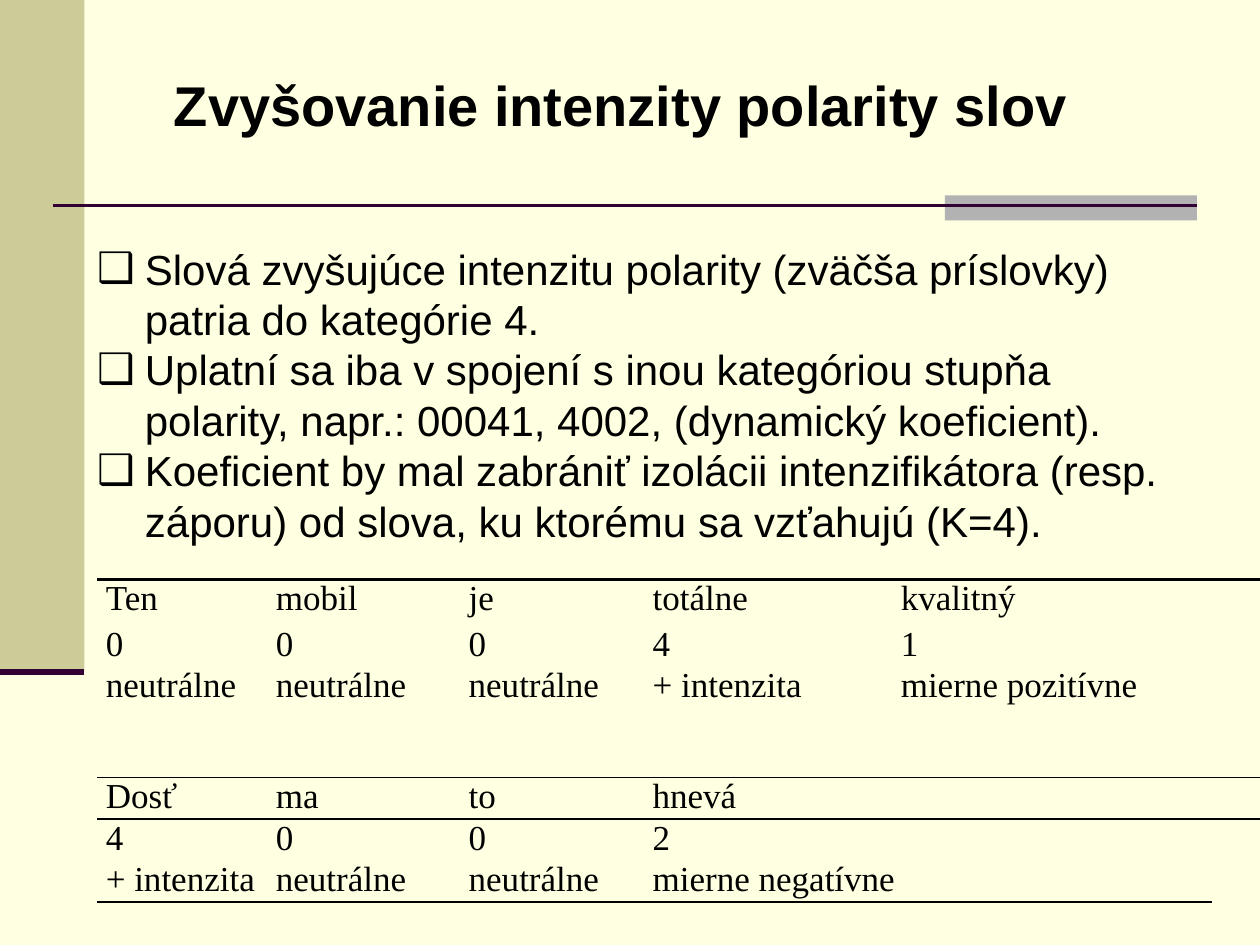
from dataclasses import dataclass

import pptx
import pptx.dml.color
import pptx.enum.shapes
import pptx.enum.text
import pptx.oxml
import pptx.oxml.ns
import pptx.util

Inches = pptx.util.Inches
Pt = pptx.util.Pt
RGBColor = pptx.dml.color.RGBColor

CREAM = RGBColor(0xFF, 0xFF, 0xE1)
OLIVE = RGBColor(0xCC, 0xCC, 0x99)
GREY = RGBColor(0xB2, 0xB2, 0xB2)
PLUM = RGBColor(0x33, 0x00, 0x33)
BLACK = RGBColor(0x00, 0x00, 0x00)
NO_STYLE = "{2D5ABB26-0587-4C30-8999-92F81FD0307C}"
NAMESPACE = pptx.oxml.ns.nsdecls("a")


@dataclass
class Block:
    left: float
    top: float
    width: float
    height: float
    color: RGBColor


@dataclass
class Rule:
    left: float
    right: float
    y: float
    weight: float


@dataclass
class Border:
    row: int
    side: str
    weight: float
    columns: int


BLOCKS = [Block(0, 0, 0.67, 5.33, OLIVE), Block(7.5, 1.55, 2, 0.2, GREY)]
RULES = [Rule(0.42, 9.5, 1.63, 1.5), Rule(0, 0.67, 5.33, 3.5)]

TITLE = "Zvyšovanie intenzity polarity slov"
BULLETS = [
    "Slová zvyšujúce intenzitu polarity (zväčša príslovky) patria do kategórie 4.",
    "Uplatní sa iba v spojení s inou kategóriou stupňa polarity, napr.: 00041, 4002, "
    "(dynamický koeficient).",
    "Koeficient by mal zabrániť izolácii intenzifikátora (resp. záporu) od slova, "
    "ku ktorému sa vzťahujú (K=4).",
]

COLUMN_WIDTHS = [1.35, 1.53, 1.46, 1.97, 2.54, 0.41]
ROW_HEIGHTS = [0.36, 0.33, 0.88, 0.33, 0.33, 0.33]
ROWS = [
    ["Ten", "mobil", "je", "totálne", "kvalitný"],
    ["0", "0", "0", "4", "1"],
    ["neutrálne", "neutrálne", "neutrálne", "+ intenzita", "mierne pozitívne"],
    ["Dosť", "ma", "to", "hnevá"],
    ["4", "0", "0", "2"],
    ["+ intenzita", "neutrálne", "neutrálne", "mierne negatívne"],
]
BORDERS = [
    Border(0, "T", 1.5, 6),
    Border(2, "B", 1, 6),
    Border(3, "T", 1, 6),
    Border(5, "B", 1.5, 5),
]


def add_run(paragraph, text: str, font: str, size: float, bold: bool = False) -> None:
    run = paragraph.add_run()
    run.text = text
    run.font.name = font
    run.font.size = Pt(size)
    run.font.bold = bold
    run.font.color.rgb = BLACK


def place(shape, left: float, top: float, width: float, height: float) -> None:
    shape.left, shape.top = Inches(left), Inches(top)
    shape.width, shape.height = Inches(width), Inches(height)


def add_block(slide, block: Block) -> None:
    shape = slide.shapes.add_shape(
        pptx.enum.shapes.MSO_SHAPE.RECTANGLE,
        Inches(block.left), Inches(block.top), Inches(block.width), Inches(block.height),
    )
    shape.shadow.inherit = False
    shape.fill.solid()
    shape.fill.fore_color.rgb = block.color
    shape.line.fill.background()


def add_rule(slide, rule: Rule) -> None:
    connector = slide.shapes.add_connector(
        pptx.enum.shapes.MSO_CONNECTOR.STRAIGHT,
        Inches(rule.left), Inches(rule.y), Inches(rule.right), Inches(rule.y),
    )
    connector.line.color.rgb = PLUM
    connector.line.width = Pt(rule.weight)
    connector._element.spPr.append(pptx.oxml.parse_xml(f"<a:effectLst {NAMESPACE}/>"))


def fill_title(shape) -> None:
    place(shape, 1.28, 0.51, 7.4, 0.63)
    frame = shape.text_frame
    frame.word_wrap = False
    frame.auto_size = pptx.enum.text.MSO_AUTO_SIZE.NONE
    paragraph = frame.paragraphs[0]
    paragraph.alignment = pptx.enum.text.PP_ALIGN.LEFT
    add_run(paragraph, TITLE, "Arial", 32, bold=True)


def fill_bullets(shape) -> None:
    place(shape, 0.67, 1.88, 8.98, 2.52)
    frame = shape.text_frame
    frame.word_wrap = True
    frame.auto_size = pptx.enum.text.MSO_AUTO_SIZE.NONE
    for index, text in enumerate(BULLETS):
        paragraph = frame.add_paragraph() if index else frame.paragraphs[0]
        paragraph.space_before = Pt(0)
        properties = paragraph._p.get_or_add_pPr()
        properties.set("marL", str(Inches(0.38)))
        properties.set("indent", str(-Inches(0.38)))
        properties.append(pptx.oxml.parse_xml(f'<a:buFont {NAMESPACE} typeface="Arial"/>'))
        properties.append(pptx.oxml.parse_xml(f'<a:buChar {NAMESPACE} char="❑"/>'))
        add_run(paragraph, text, "Arial", 24)


def draw_border(cell, border: Border) -> None:
    line = pptx.oxml.parse_xml(
        f'<a:ln{border.side} {NAMESPACE} w="{Pt(border.weight)}"><a:solidFill>'
        f'<a:srgbClr val="{BLACK}"/></a:solidFill></a:ln{border.side}>'
    )
    cell._tc.get_or_add_tcPr().insert(0, line)


def add_word_table(slide) -> None:
    frame = slide.shapes.add_table(
        len(ROW_HEIGHTS), len(COLUMN_WIDTHS), Inches(0.77), Inches(4.6),
        Inches(sum(COLUMN_WIDTHS)), Inches(sum(ROW_HEIGHTS)),
    )
    table = frame.table
    table.first_row = table.horz_banding = False
    table._tbl.tblPr.find(pptx.oxml.ns.qn("a:tableStyleId")).text = NO_STYLE
    for column, width in zip(table.columns, COLUMN_WIDTHS):
        column.width = Inches(width)
    for row, height in zip(table.rows, ROW_HEIGHTS):
        row.height = Inches(height)

    for cell in table.iter_cells():
        cell.fill.background()
        cell.margin_left = cell.margin_right = Inches(0.07)
        cell.margin_top = cell.margin_bottom = 0

    # The last word of each sentence spans two columns
    for row_index, words in enumerate(ROWS):
        last = len(words) - 1
        table.cell(row_index, last).merge(table.cell(row_index, last + 1))
        for column_index, word in enumerate(words):
            paragraph = table.cell(row_index, column_index).text_frame.paragraphs[0]
            add_run(paragraph, word, "Times New Roman", 20)

    for border in BORDERS:
        for column_index in range(border.columns):
            draw_border(table.cell(border.row, column_index), border)


def main() -> None:
    presentation = pptx.Presentation()
    presentation.slide_width, presentation.slide_height = Inches(10), Inches(7.5)
    slide = presentation.slides.add_slide(presentation.slide_layouts[1])
    slide.background.fill.solid()
    slide.background.fill.fore_color.rgb = CREAM

    # Side bar, accent and rules
    for block in BLOCKS:
        add_block(slide, block)
    for rule in RULES:
        add_rule(slide, rule)

    # Text and table
    fill_title(slide.shapes.title)
    fill_bullets(slide.placeholders[1])
    add_word_table(slide)
    presentation.save("out.pptx")


if __name__ == "__main__":
    main()
